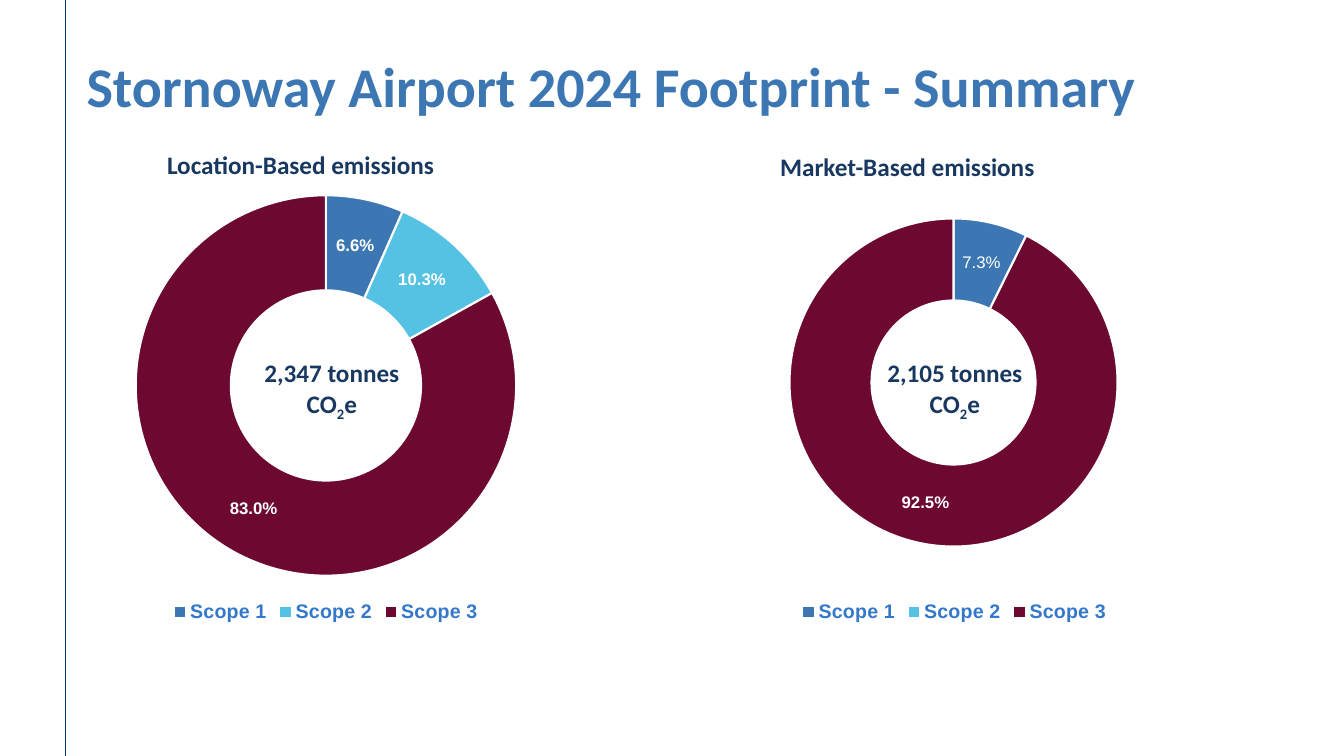
"""Build the Stornoway Airport 2024 footprint summary slide."""
from lxml import etree
from pptx import Presentation
from pptx import util as u
from pptx.chart.data import CategoryChartData
from pptx.dml.color import RGBColor
from pptx.enum import chart as charts, shapes, text
from pptx.oxml import parse_xml
from pptx.oxml.ns import nsdecls, qn

COLOURS = {
    "title": "3C77B3", "body": "183860", "rule": "023671", "legend": "3478CC",
    "white": "FFFFFF", "Scope 1": "3C77B3", "Scope 2": "55C2E4", "Scope 3": "6D0931",
}
SCOPES = ("Scope 1", "Scope 2", "Scope 3")


def colour(name):
    return RGBColor.from_string(COLOURS[name])


def style_font(font, size, name, face="Calibri", bold=True):
    font.size, font.name, font.bold = u.Pt(size), face, bold
    font.color.rgb = colour(name)


def write(frame, pieces, size=18, name="body", align=text.PP_ALIGN.LEFT, spacing=None):
    """Write (wording, baseline) pieces as one paragraph."""
    paragraph = frame.paragraphs[0]
    paragraph.alignment = align
    if spacing:
        paragraph.line_spacing = spacing
    for wording, baseline in pieces:
        run = paragraph.add_run()
        run.text = wording
        style_font(run.font, size, name)
        if baseline:
            run._r.get_or_add_rPr().set("baseline", str(baseline * 1000))


def add_title(slide, wording):
    title = slide.shapes.title
    title.left, title.top, title.width, title.height = (
        u.Cm(2.18), u.Cm(1.5), u.Cm(32.33), u.Cm(2.69))
    frame = title.text_frame
    frame.margin_left = frame.margin_top = frame.margin_right = frame.margin_bottom = 0
    frame.vertical_anchor = text.MSO_ANCHOR.TOP
    frame.auto_size = text.MSO_AUTO_SIZE.NONE
    frame.word_wrap = True
    write(frame, [(wording, 0)], size=40, name="title", spacing=0.9)


def add_label(slide, left, top, width, height, pieces, **style):
    label = slide.shapes.add_textbox(u.Cm(left), u.Cm(top), u.Cm(width), u.Cm(height))
    label.text_frame.word_wrap = True
    label.text_frame.auto_size = text.MSO_AUTO_SIZE.SHAPE_TO_FIT_TEXT
    write(label.text_frame, pieces, **style)


def add_total(slide, left, tonnes):
    add_label(slide, left, 8.89, 4.95, 1.8,
              [(f"{tonnes} tonnes CO", 0), ("2", -25), ("e", 0)],
              align=text.PP_ALIGN.CENTER)


def add_margin_rule(slide, x, bottom):
    rule = slide.shapes.add_connector(shapes.MSO_CONNECTOR.STRAIGHT, x, 0, x, bottom)
    rule.line.color.rgb = colour("rule")
    rule.line.width = u.Pt(1)
    etree.SubElement(rule._element.spPr, qn("a:effectLst"))


def add_doughnut(slide, left, top, width, height, shares):
    """Add a doughnut of the three scopes and return its chart."""
    emissions = CategoryChartData(number_format="0.0%")
    emissions.categories = SCOPES
    emissions.add_series("Series 1", shares)
    chart = slide.shapes.add_chart(
        charts.XL_CHART_TYPE.DOUGHNUT, u.Cm(left), u.Cm(top), u.Cm(width), u.Cm(height),
        emissions).chart
    style_font(chart.font, 10, "body", "Arial", False)
    chart.has_title = False
    chart.has_legend = True
    chart.legend.position = charts.XL_LEGEND_POSITION.BOTTOM
    chart.legend.include_in_layout = False
    style_font(chart.legend.font, 14, "legend", "Arial")

    doughnut = chart.plots[0]
    doughnut.vary_by_categories = True
    doughnut._element.find(qn("c:holeSize")).set("val", "75")
    series = doughnut.series[0]
    for index, scope in enumerate(SCOPES):
        sector = series.points[index].format
        sector.fill.solid()
        sector.fill.fore_color.rgb = colour(scope)
        sector.line.color.rgb = colour("white")
        sector.line.width = u.Pt(1.5)
    labels = series.data_labels
    labels.show_value = True
    labels.show_percentage = False
    labels.number_format, labels.number_format_is_linked = "0.0%", False
    style_font(labels.font, 12, "white", "Arial")

    chart.element.find(qn("c:chart")).addnext(parse_xml(
        f'<c:spPr {nsdecls("c", "a")}><a:noFill/><a:ln><a:noFill/></a:ln></c:spPr>'))
    return chart


def place_plot(chart, x, y, w, h):
    area = chart.element.find(".//" + qn("c:plotArea"))
    for old in area.findall(qn("c:layout")):
        area.remove(old)
    sizes = "".join(f'<c:{key} val="{value}"/>' for key, value in zip("xywh", (x, y, w, h)))
    area.insert(0, parse_xml(
        f'<c:layout {nsdecls("c")}><c:manualLayout><c:layoutTarget val="inner"/>'
        f'<c:xMode val="edge"/><c:yMode val="edge"/>{sizes}</c:manualLayout></c:layout>'))


def adjust_market_labels(chart):
    """Lighten the Scope 1 label and remove the one for the empty Scope 2."""
    series = chart.plots[0].series[0]
    style_font(series.points[0].data_label.font, 12, "white", "Arial", False)
    series.data_labels._element.insert(1, parse_xml(
        f'<c:dLbl {nsdecls("c")}><c:idx val="1"/><c:delete val="1"/></c:dLbl>'))


def main():
    deck = Presentation()
    deck.slide_width, deck.slide_height = u.Cm(33.87), u.Cm(19.05)
    slide = deck.slides.add_slide(deck.slide_layouts[5])

    add_margin_rule(slide, u.Cm(1.65), deck.slide_height)
    add_title(slide, "Stornoway Airport 2024 Footprint - Summary")
    add_total(slide, 5.89, "2,347")
    add_label(slide, 3.96, 3.63, 10.06, 1.02, [("Location-Based emissions", 0)])
    add_label(slide, 19.41, 3.68, 10.06, 1.02, [("Market-Based emissions", 0)])
    add_total(slide, 21.59, "2,105")

    add_doughnut(slide, -1.96, 4.57, 20.35, 11.23, (0.066, 0.103, 0.83))
    market = add_doughnut(slide, 4.9, 4.55, 38.3, 11.25, (0.073, 0, 0.925))
    place_plot(market, 0.388, 0.085, 0.223, 0.735)
    adjust_market_labels(market)

    deck.save("out.pptx")


if __name__ == "__main__":
    main()
